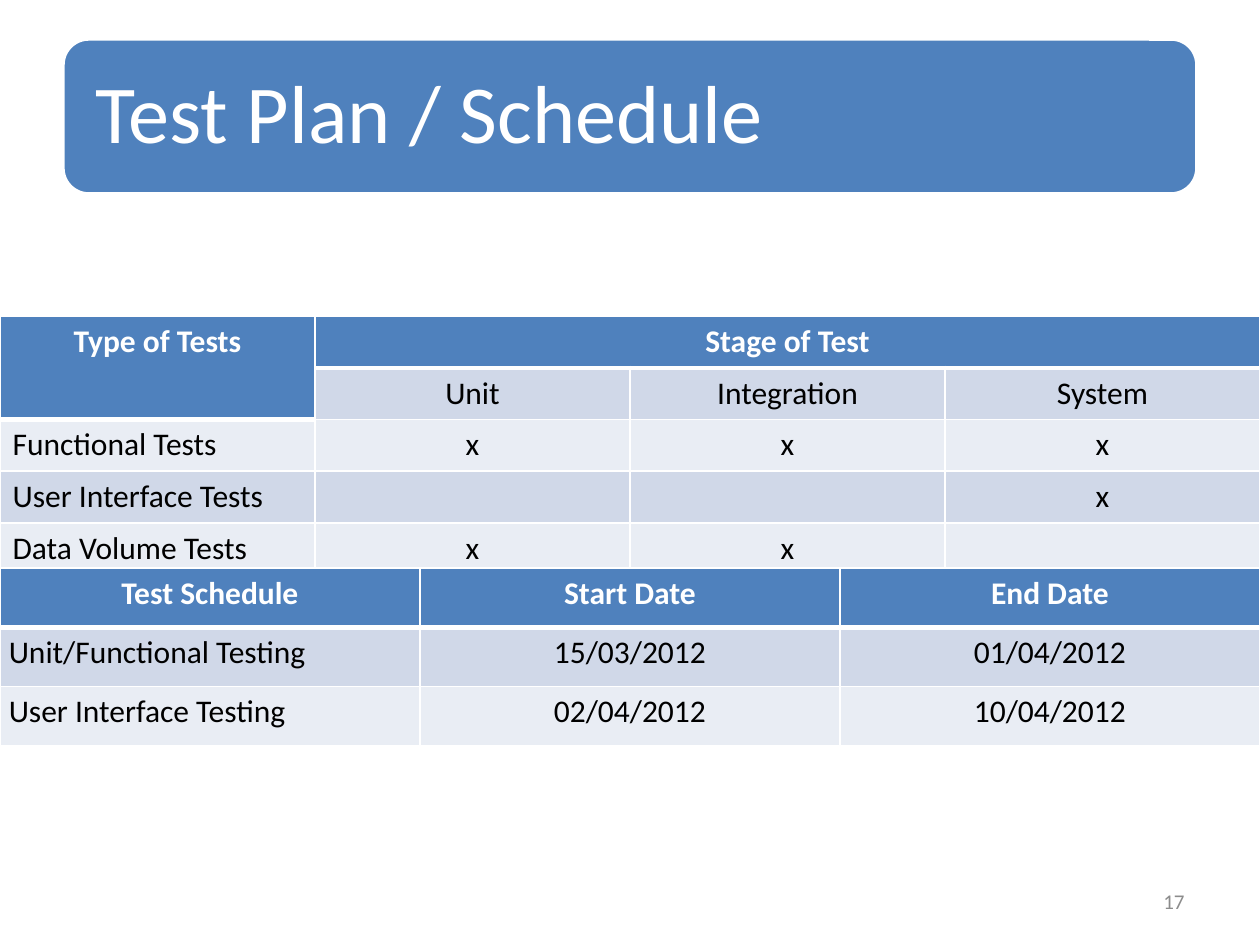
"""Build the test plan and schedule slide."""
from dataclasses import dataclass

from lxml import etree
from pptx import Presentation
from pptx.dml.color import RGBColor
from pptx.enum.shapes import MSO_SHAPE
from pptx.enum.text import MSO_ANCHOR, PP_ALIGN
from pptx.oxml.ns import qn
from pptx.util import Inches, Pt

ROUNDED = MSO_SHAPE.ROUNDED_RECTANGLE
MIDDLE = MSO_ANCHOR.MIDDLE
LEFT, CENTER, RIGHT = PP_ALIGN.LEFT, PP_ALIGN.CENTER, PP_ALIGN.RIGHT


@dataclass(frozen=True)
class Theme:
    font: str = "Calibri"
    accent: str = "4F81BD"
    bands: tuple = ("E9EDF4", "D0D8E8")
    white: str = "FFFFFF"
    black: str = "000000"
    gray: str = "8C8C8C"
    title_size: int = 47
    table_size: int = 18
    number_size: int = 12


THEME = Theme()


def write(frame, text, size, color, align=LEFT, bold=False):
    frame.text = text
    paragraph = frame.paragraphs[0]
    paragraph.alignment = align
    for run in paragraph.runs:
        run.font.name = THEME.font
        run.font.size = Pt(size)
        run.font.bold = bold
        run.font.color.rgb = RGBColor.from_string(color)
    return paragraph


def style_cell(cell, text, fill, color, align, bold, widths):
    cell.fill.solid()
    cell.fill.fore_color.rgb = RGBColor.from_string(fill)
    properties = cell._tc.get_or_add_tcPr()
    for position, (side, width) in enumerate(widths.items()):
        border = etree.Element(qn(f"a:ln{side}"), w=str(Pt(width)))
        paint = etree.SubElement(border, qn("a:solidFill"))
        etree.SubElement(paint, qn("a:srgbClr"), val=THEME.white)
        properties.insert(position, border)
    return write(cell.text_frame, text, THEME.table_size, color, align, bold)


presentation = Presentation()
presentation.slide_width = Inches(10)
presentation.slide_height = Inches(7.5)
slide = presentation.slides.add_slide(presentation.slide_layouts[6])

banner = slide.shapes.add_shape(ROUNDED, Inches(0.5), Inches(0.31), Inches(9), Inches(1.23))
banner.shadow.inherit = False
banner.fill.solid()
banner.fill.fore_color.rgb = RGBColor.from_string(THEME.accent)
banner.line.color.rgb = RGBColor.from_string(THEME.white)
banner.line.width = Pt(2)

title = slide.shapes.add_textbox(Inches(0.56), Inches(0.37), Inches(8.88), Inches(1.11)).text_frame
title.word_wrap = True
title.vertical_anchor = MIDDLE
title.margin_left = title.margin_right = title.margin_top = title.margin_bottom = Inches(0.2)
write(title, "Test Plan / Schedule", THEME.title_size, THEME.white).line_spacing = 0.9

page_number = slide.shapes.add_textbox(Inches(7.17), Inches(6.95), Inches(2.33), Inches(0.4)).text_frame
page_number.word_wrap = True
page_number.vertical_anchor = MIDDLE
write(page_number, "17", THEME.number_size, THEME.gray, RIGHT)

stage_rows = [
    ["Type of Tests", "Stage of Test", "", ""],
    ["", "Unit", "Integration", "System"],
    ["Functional Tests", "x", "x", "x"],
    ["User Interface Tests", "", "", "x"],
    ["Data Volume Tests", "x", "x", ""],
]
schedule_rows = [
    ["Test Schedule", "Start Date", "End Date"],
    ["Unit/Functional Testing", "15/03/2012", "01/04/2012"],
    ["User Interface Testing", "02/04/2012", "10/04/2012"],
]
tables = [
    (stage_rows, 2.51, 0.41, [((0, 0), (1, 0)), ((0, 1), (0, 3))], False),
    (schedule_rows, 4.51, 0.47, [], True),
]

for rows, top, row_height, merges, tight in tables:
    grid = slide.shapes.add_table(
        len(rows), len(rows[0]), Inches(0), Inches(top), Inches(10), Inches(row_height * len(rows))
    ).table
    for grid_row in grid.rows:
        grid_row.height = Inches(row_height)
    for first, last in merges:
        grid.cell(*first).merge(grid.cell(*last))
    for r, row in enumerate(rows):
        for c, text in enumerate(row):
            cell = grid.cell(r, c)
            header_depth = 2 if merges and c == 0 else 1
            header = r < header_depth
            widths = {
                "L": 1,
                "R": 1,
                "T": 3 if r == header_depth else 1,
                "B": 3 if header else 1,
            }
            paragraph = style_cell(
                cell,
                text,
                THEME.accent if header else THEME.bands[r % 2],
                THEME.white if header else THEME.black,
                CENTER if header or c else LEFT,
                header,
                widths,
            )
            if tight and not header:
                cell.margin_left = cell.margin_right = Inches(0.07)
                cell.margin_top = cell.margin_bottom = Inches(0)
                paragraph.line_spacing = 1.15

presentation.save("out.pptx")
